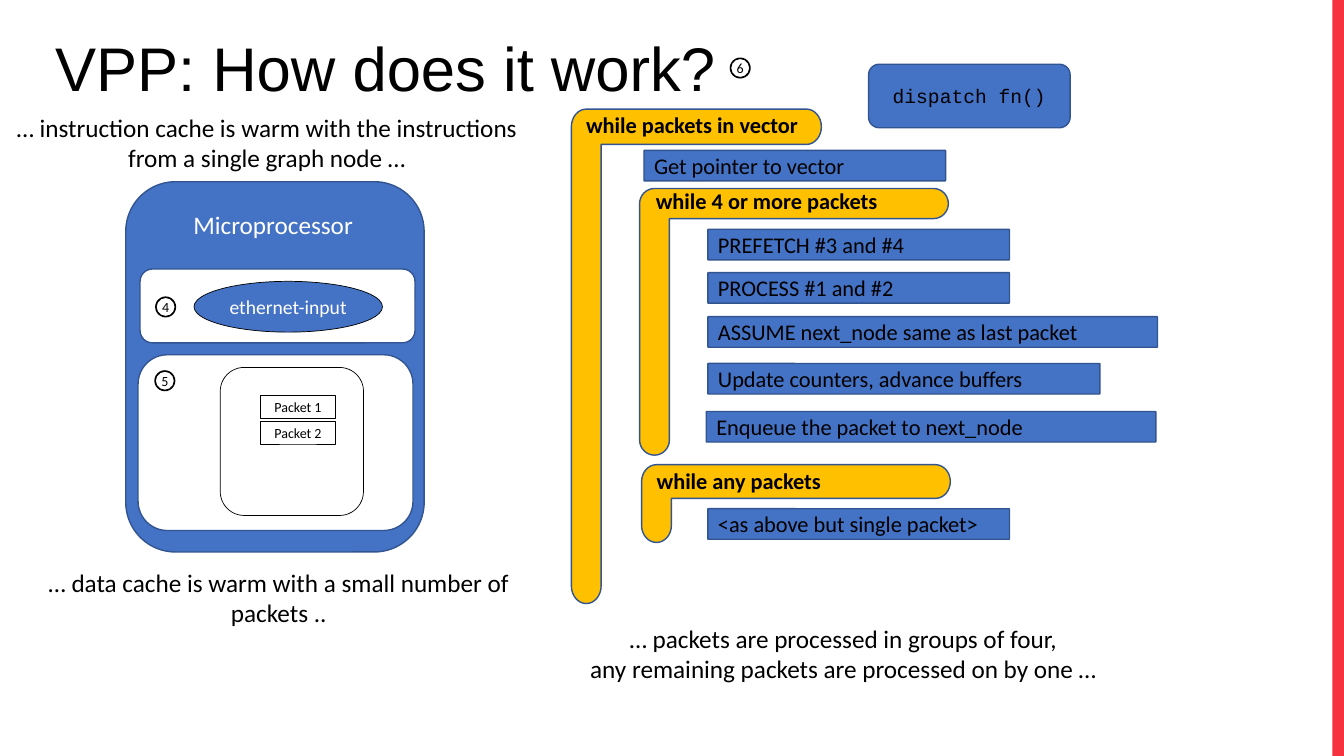
from dataclasses import dataclass
from math import cos, radians, sin
from typing import Optional

from pptx import Presentation
from pptx.dml.color import RGBColor
from pptx.enum.shapes import MSO_SHAPE
from pptx.enum.text import MSO_ANCHOR, MSO_AUTO_SIZE, PP_ALIGN
from pptx.oxml import parse_xml
from pptx.oxml.ns import nsdecls, qn
from pptx.util import Cm, Pt

BLUE, EDGE, GOLD = "4472C4", "325491", "FFC000"
BLACK, WHITE, RED = "000000", "FFFFFF", "F7323F"
RECT, ROUND = MSO_SHAPE.RECTANGLE, MSO_SHAPE.ROUNDED_RECTANGLE
OVAL, DONUT = MSO_SHAPE.OVAL, MSO_SHAPE.DONUT
ROUNDNESS = 0.55

Segment = list[tuple[int, int]]


@dataclass
class Words:
    text: str
    size: float
    color: str = BLACK
    font: str = "Calibri"
    bold: bool = False
    align: PP_ALIGN = PP_ALIGN.CENTER
    wrap: bool = False
    spacing: Optional[float] = None


@dataclass
class Box:
    kind: MSO_SHAPE
    left: float
    top: float
    width: float
    height: float
    fill: Optional[str] = None
    line: Optional[str] = None
    weight: float = 1
    words: Optional[Words] = None
    adj: Optional[float] = None
    rotation: float = 0
    inset: Optional[float] = None


@dataclass
class Label:
    left: float
    top: float
    width: float
    height: float
    words: Words
    anchor: MSO_ANCHOR = MSO_ANCHOR.TOP
    grow: bool = True


@dataclass
class Bracket:
    left: float
    top: float
    width: float
    height: float
    bar: float
    stem: float = 0.75


def rgb(color: str) -> RGBColor:
    return RGBColor.from_string(color)


def paint(sp, fill: Optional[str], line: Optional[str], weight: float) -> None:
    sp.shadow.inherit = False
    if fill:
        sp.fill.solid()
        sp.fill.fore_color.rgb = rgb(fill)
    else:
        sp.fill.background()
    if line:
        sp.line.color.rgb = rgb(line)
        sp.line.width = Pt(weight)
    else:
        sp.line.fill.background()


def write(tf, words: Words) -> None:
    tf.word_wrap = words.wrap
    p = tf.paragraphs[0]
    p.alignment = words.align
    if words.spacing:
        p.line_spacing = words.spacing
    for i, text in enumerate(words.text.split("\n")):
        if i:
            p.add_line_break()
        r = p.add_run()
        r.text = text
        r.font.size = Pt(words.size)
        r.font.name = words.font
        r.font.bold = words.bold
        r.font.color.rgb = rgb(words.color)


def draw_box(s, box: Box) -> None:
    sp = s.shapes.add_shape(box.kind, Cm(box.left), Cm(box.top), Cm(box.width), Cm(box.height))
    paint(sp, box.fill, box.line, box.weight)
    sp.rotation = box.rotation
    if box.adj is not None:
        sp.adjustments[0] = box.adj
    if box.words:
        tf = sp.text_frame
        tf.vertical_anchor = MSO_ANCHOR.MIDDLE
        if box.inset is not None:
            tf.margin_left = tf.margin_right = Cm(box.inset)
            tf.margin_top = tf.margin_bottom = Cm(box.inset)
        write(tf, box.words)


def draw_label(s, label: Label) -> None:
    sp = s.shapes.add_textbox(Cm(label.left), Cm(label.top), Cm(label.width), Cm(label.height))
    tf = sp.text_frame
    tf.vertical_anchor = label.anchor
    tf.auto_size = MSO_AUTO_SIZE.SHAPE_TO_FIT_TEXT if label.grow else MSO_AUTO_SIZE.NONE
    write(tf, label.words)


def quarter(cx: float, cy: float, rx: float, ry: float, start: int) -> Segment:
    a, k = radians(start), ROUNDNESS
    c, d = cos(a), sin(a)
    offsets = [(c - k * d, d + k * c), (k * c - d, k * d + c), (-d, c)]
    return [(Cm(cx + rx * x), Cm(cy + ry * y)) for x, y in offsets]


def draw_bracket(s, b: Bracket) -> None:
    rx, ry = b.stem / 2, b.bar / 2
    right, bottom = b.left + b.width, b.top + b.height
    bar_y, stem_x = b.top + ry, b.left + rx
    segments: list[Segment] = [
        quarter(stem_x, bar_y, rx, ry, 180),
        [(Cm(right - rx), Cm(b.top))],
        quarter(right - rx, bar_y, rx, ry, 270),
        quarter(right - rx, bar_y, rx, ry, 0),
        [(Cm(b.left + b.stem), Cm(b.top + b.bar))],
        [(Cm(b.left + b.stem), Cm(bottom - ry))],
        quarter(stem_x, bottom - ry, rx, ry, 0),
        quarter(stem_x, bottom - ry, rx, ry, 90),
    ]
    builder = s.shapes.build_freeform(Cm(b.left), Cm(bar_y))
    builder.add_line_segments([pt for seg in segments for pt in seg], close=True)
    sp = builder.convert_to_shape()
    lines = iter(list(sp._element.iter(qn("a:lnTo"))))
    for seg in segments:
        parts = [next(lines) for _ in seg]
        if len(parts) == 3:
            curve = parse_xml(f"<a:cubicBezTo {nsdecls('a')}/>")
            parts[0].addprevious(curve)
            for part in parts:
                curve.append(part[0])
                part.getparent().remove(part)
    paint(sp, GOLD, EDGE, 1)


def step(left: float, top: float, width: float, text: str) -> Box:
    return Box(ROUND, left, top, width, 0.77, BLUE, EDGE,
               words=Words(text, 16, align=PP_ALIGN.LEFT), adj=0.019)


def loop_label(left: float, top: float, width: float, text: str) -> Label:
    return Label(left, top, width, 0.94, Words(text, 16, bold=True, align=PP_ALIGN.LEFT))


def caption(left: float, top: float, text: str) -> Label:
    return Label(left, top, 13.59, 1.8, Words(text, 18, wrap=True))


def packet(number: int) -> Box:
    return Box(RECT, 6.56, 9.32 + 0.65 * number, 1.9, 0.57, WHITE, BLACK, 0.5,
               Words(f"Packet {number}", 10))


def badge(left: float, top: float, number: int) -> Box:
    return Box(DONUT, left, top, 0.53, 0.53, BLACK, words=Words(str(number), 10),
               adj=0.074, inset=0)


ITEMS = [
    Box(RECT, 33.58, 0, 0.29, 19.05, RED),
    Box(ROUND, 21.89, 1.62, 5.08, 1.6, BLUE, EDGE,
        words=Words("dispatch fn()", 14, font="Courier New", wrap=True)),
    Bracket(14.4, 2.75, 6.3, 12.46, 0.89),
    step(16.23, 3.79, 7.6, "Get pointer to vector"),
    Bracket(16.12, 4.75, 7.78, 6.72, 0.76),
    step(17.84, 5.78, 7.6, "PREFETCH #3 and #4"),
    step(17.84, 6.87, 7.6, "PROCESS #1 and #2"),
    step(17.84, 7.98, 11.33, "ASSUME next_node same as last packet"),
    step(17.84, 9.16, 9.88, "Update counters, advance buffers"),
    step(17.8, 10.37, 11.33, "Enqueue the packet to next_node"),
    Bracket(16.17, 11.71, 7.78, 1.96, 0.85),
    step(17.84, 12.82, 7.6, "<as above but single packet>"),
    loop_label(14.52, 2.67, 5.92, "while packets in vector"),
    loop_label(16.28, 4.6, 6.17, "while 4 or more packets"),
    loop_label(16.3, 11.65, 4.7, "while any packets"),
    Box(ROUND, 3.17, 4.58, 7.52, 9.33, BLUE, EDGE),
    Box(ROUND, 3.53, 6.78, 6.93, 1.86, WHITE, EDGE),
    Box(ROUND, 3.48, 8.94, 6.93, 4.43, WHITE, EDGE),
    Label(4.04, 5.16, 5.69, 1.02, Words("Microprocessor", 18, WHITE, wrap=True)),
    Box(OVAL, 4.89, 7.09, 4.75, 1.28, BLUE, BLACK, 0.5, Words("ethernet-input", 14, WHITE)),
    Box(ROUND, 5.49, 9.32, 3.73, 3.61, line=BLACK, weight=0.5, rotation=90),
    packet(1),
    packet(2),
    caption(14.53, 15.57, "… packets are processed in groups of four, \n"
                          "any remaining packets are processed on by one … "),
    badge(3.91, 7.47, 4),
    caption(-0.07, 2.7, "… instruction cache is warm with the instructions "
                        "from a single graph node …"),
    badge(3.89, 9.33, 5),
    caption(0.23, 14.17, "… data cache is warm with a small number of packets .."),
    badge(18.39, 1.45, 6),
    Label(1.14, 0.45, 30.15, 2.72,
          Words("VPP: How does it work?", 44, font="Arial", align=PP_ALIGN.LEFT,
                wrap=True, spacing=0.9), MSO_ANCHOR.MIDDLE, False),
]


def main() -> None:
    prs = Presentation()
    prs.slide_width, prs.slide_height = Cm(33.87), Cm(19.05)
    s = prs.slides.add_slide(prs.slide_layouts[6])
    draw = {Box: draw_box, Label: draw_label, Bracket: draw_bracket}
    for item in ITEMS:
        draw[type(item)](s, item)
    prs.save("out.pptx")


if __name__ == "__main__":
    main()
